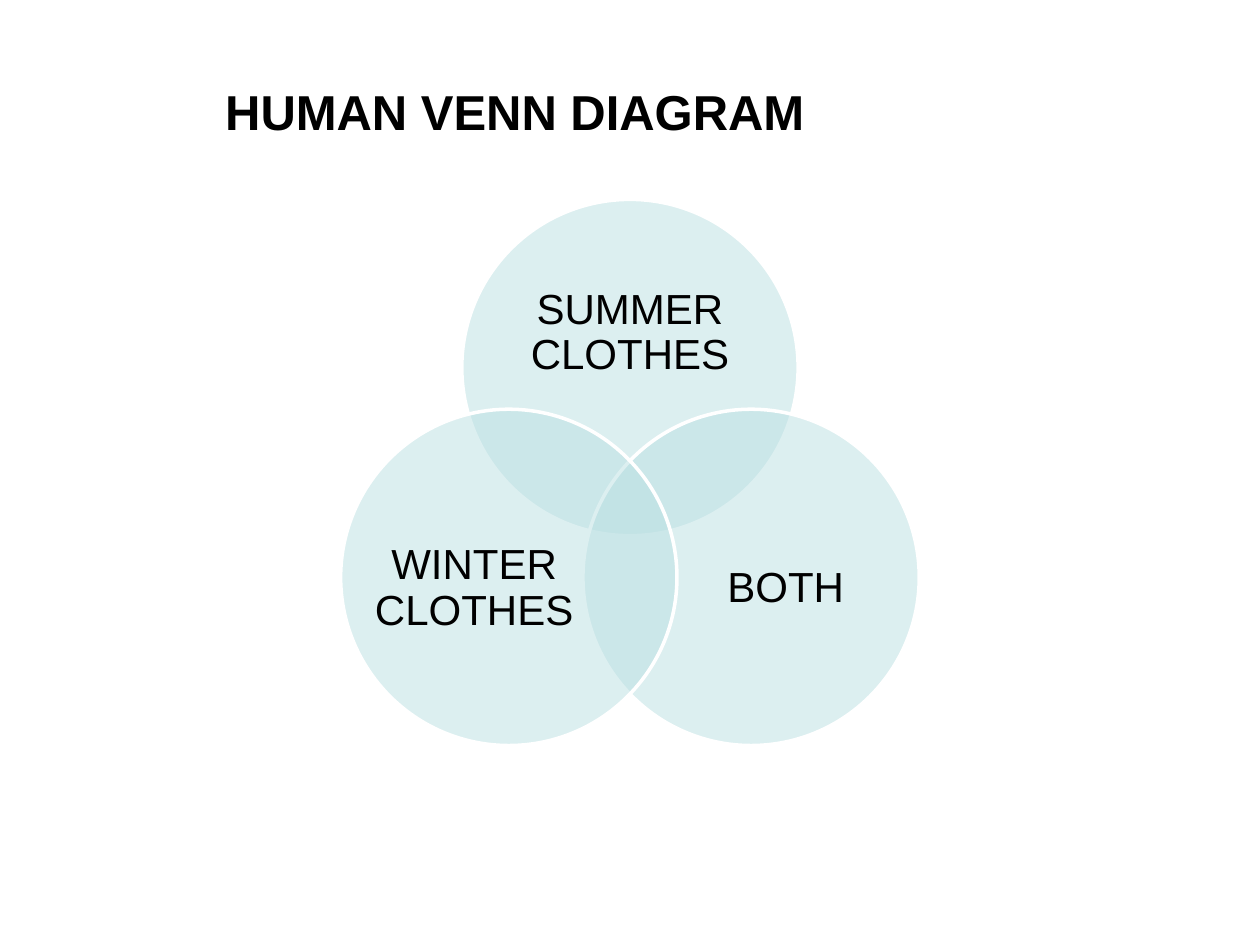
from dataclasses import dataclass
from math import cos, radians, sin

from lxml.etree import SubElement
from pptx import Presentation
from pptx.dml.color import RGBColor
from pptx.enum.shapes import MSO_SHAPE as Preset
from pptx.enum.text import MSO_ANCHOR as Anchor, PP_ALIGN as Align
from pptx.oxml.ns import qn
from pptx.slide import Slide
from pptx.util import Cm, Pt


@dataclass(frozen=True)
class Theme:
    """Colours, font and type sizes of the slide."""
    ink: RGBColor = RGBColor(0, 0, 0)
    circle: RGBColor = RGBColor(0xBB, 0xE0, 0xE3)
    rim: RGBColor = RGBColor(0xFF, 0xFF, 0xFF)
    opacity: int = 50
    rim_width: float = 2
    font: str = "Arial"
    title_size: float = 28
    label_size: float = 24


@dataclass(frozen=True)
class VennSet:
    """One set: its direction from the middle and its label box in cm."""
    label: str
    angle: float
    label_dx: float
    label_dy: float
    label_width: float
    label_height: float


THEME = Theme()
DIAMETER = 6.78
ORBIT = 2.82
MIDDLE_X, MIDDLE_Y = 12.7, 10.23
SETS = (
    VennSet("SUMMER CLOTHES", -90, 0, -0.69, 4.98, 3.05),
    VennSet("BOTH", 30, 0.7, 0.23, 4.06, 3.73),
    VennSet("WINTER CLOTHES", 150, -0.7, 0.23, 4.06, 3.73),
)


def add_words(paragraph, words: str, size: float, bold: bool = False) -> None:
    """Add one styled run to a paragraph."""
    run = paragraph.add_run()
    run.text = words
    run.font.name = THEME.font
    run.font.size = Pt(size)
    run.font.bold = bold
    run.font.color.rgb = THEME.ink


def add_title(slide: Slide, words: str) -> None:
    """Add the slide title."""
    title = slide.shapes.add_textbox(Cm(4.29), Cm(1.52), Cm(14.4), Cm(1.45))
    title.text_frame.word_wrap = True
    add_words(title.text_frame.paragraphs[0], words, THEME.title_size, True)


def add_circle(slide: Slide, x: float, y: float) -> None:
    """Add a translucent circle centred on a point."""
    circle = slide.shapes.add_shape(
        Preset.OVAL, Cm(x - DIAMETER / 2), Cm(y - DIAMETER / 2),
        Cm(DIAMETER), Cm(DIAMETER))
    circle.shadow.inherit = False
    circle.fill.solid()
    circle.fill.fore_color.rgb = THEME.circle
    tint = circle.fill._xPr.find(qn("a:solidFill"))[0]
    SubElement(tint, qn("a:alpha"), val=str(THEME.opacity * 1000))
    circle.line.color.rgb = THEME.rim
    circle.line.width = Pt(THEME.rim_width)


def add_label(slide: Slide, venn_set: VennSet, x: float, y: float) -> None:
    """Add the label of a set whose circle is centred on a point."""
    width, height = venn_set.label_width, venn_set.label_height
    label = slide.shapes.add_textbox(
        Cm(x + venn_set.label_dx - width / 2),
        Cm(y + venn_set.label_dy - height / 2), Cm(width), Cm(height))
    frame = label.text_frame
    frame.word_wrap = True
    frame.vertical_anchor = Anchor.MIDDLE
    frame.margin_left = frame.margin_right = Cm(0)
    frame.margin_top = frame.margin_bottom = Cm(0)
    paragraph = frame.paragraphs[0]
    paragraph.alignment = Align.CENTER
    paragraph.line_spacing = 0.9
    add_words(paragraph, venn_set.label, THEME.label_size)


def main() -> None:
    """Build and save the slide."""
    deck = Presentation()
    deck.slide_width, deck.slide_height = Cm(25.4), Cm(19.05)
    slide = deck.slides.add_slide(deck.slide_layouts[6])
    add_title(slide, "HUMAN VENN DIAGRAM")
    for venn_set in SETS:
        x = MIDDLE_X + ORBIT * cos(radians(venn_set.angle))
        y = MIDDLE_Y + ORBIT * sin(radians(venn_set.angle))
        add_circle(slide, x, y)
        add_label(slide, venn_set, x, y)
    deck.save("out.pptx")


if __name__ == "__main__":
    main()
